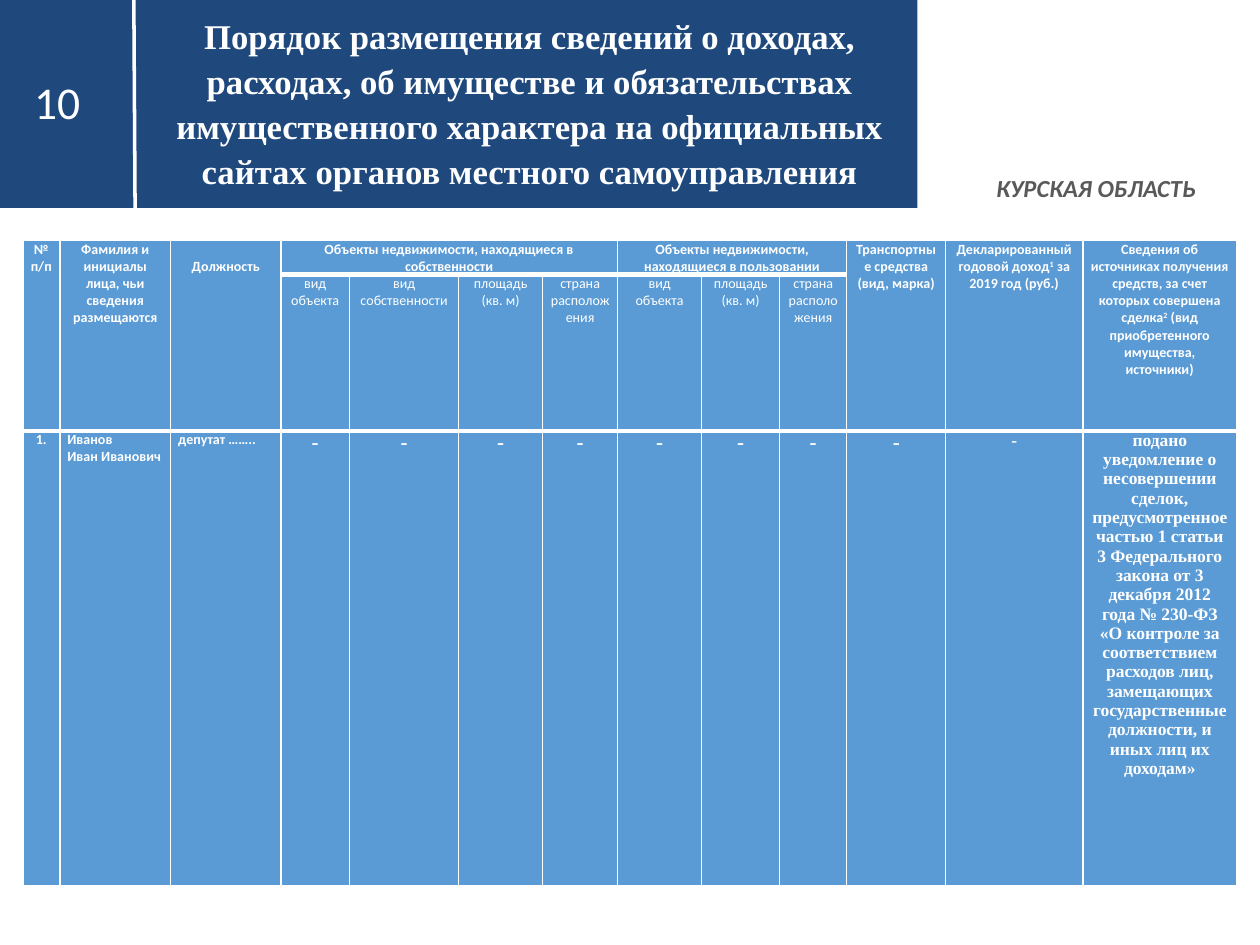
from dataclasses import dataclass

from lxml import etree
from pptx import Presentation
from pptx.dml.color import RGBColor
from pptx.enum import shapes, text
from pptx.oxml import ns
from pptx.util import Pt

NAVY, BLUE, WHITE, GRAY = "1F497D", "5B9BD5", "FFFFFF", "595959"
SANS, SERIF = "Calibri", "Times New Roman"
CENTER, JUSTIFY = text.PP_ALIGN.CENTER, text.PP_ALIGN.JUSTIFY
MIDDLE = text.MSO_ANCHOR.MIDDLE


@dataclass(frozen=True)
class Style:
    size: float
    font: str = SANS
    bold: bool = False
    italic: bool = False
    color: str = WHITE


@dataclass(frozen=True)
class Entry:
    """One table cell; parts at odd places in a paragraph are superscript."""
    row: int
    col: int
    paragraphs: tuple[tuple[str, ...], ...]
    style: Style
    rows: int = 1
    cols: int = 1
    align: text.PP_ALIGN = CENTER
    top: float = 0


def rgb(value: str) -> RGBColor:
    return RGBColor.from_string(value)


def write(frame, paragraphs, style: Style, align=CENTER, spacing=None) -> None:
    for index, parts in enumerate(paragraphs):
        paragraph = frame.paragraphs[0] if index == 0 else frame.add_paragraph()
        paragraph.alignment = align
        if spacing:
            paragraph.line_spacing = spacing
        for place, part in enumerate(parts):
            run = paragraph.add_run()
            run.text = part
            font = run.font
            font.size, font.name = Pt(style.size), style.font
            font.bold, font.italic = style.bold, style.italic
            font.color.rgb = rgb(style.color)
            if place % 2:
                run._r.get_or_add_rPr().set("baseline", "30000")


def add_label(slide, box, words: str, style: Style, wrap: bool = True) -> None:
    frame = slide.shapes.add_textbox(*map(Pt, box)).text_frame
    frame.word_wrap = wrap
    frame.vertical_anchor = MIDDLE
    write(frame, [(words,)], style)


def set_borders(cell, top: float, bottom: float) -> None:
    properties = cell._tc.get_or_add_tcPr()
    for side, width in (("L", 1), ("R", 1), ("T", top), ("B", bottom)):
        line = etree.SubElement(properties, ns.qn(f"a:ln{side}"), w=str(Pt(width)))
        fill = etree.SubElement(line, ns.qn("a:solidFill"))
        etree.SubElement(fill, ns.qn("a:srgbClr"), val=WHITE)


def fill_entry(table, entry: Entry) -> None:
    cell = table.cell(entry.row, entry.col)
    if entry.rows * entry.cols > 1:
        cell.merge(table.cell(entry.row + entry.rows - 1, entry.col + entry.cols - 1))
    cell.margin_top = Pt(entry.top)
    write(cell.text_frame, entry.paragraphs, entry.style, entry.align)


# Table content
HEAD, SUBHEAD = Style(8, bold=True), Style(8)
DASH, NOTICE = Style(12, SERIF, True), Style(10, SERIF, True)
COLUMNS = (21.2, 63.4, 62.9, 39.4, 62.3, 48, 42.9, 48, 44.6, 38.3, 56.6, 78.3, 88)
ROWS = (19.4, 89.3, 260)
BORDERS = ((1, 3), (1, 1), (3, 1))  # top and bottom of each row

TALL_HEADS = {
    0: ("№ п/п",),
    1: ("Фамилия и инициалы лица, чьи сведения размещаются",),
    2: ("Должность",),
    10: ("Транспортные средства (вид, марка)",),
    11: ("Декларированный годовой доход", "1", " за 2019 год (руб.)"),
    12: ("Сведения об источниках получения средств, за счет которых совершена сделка",
         "2", " (вид приобретенного имущества, источники)"),
}
USED = ("вид объекта", "площадь (кв. м)", "страна расположения")
OWNED = (USED[0], "вид собственности", *USED[1:])

entries = [Entry(0, col, (parts,), HEAD, rows=2, top=9.8 if col == 2 else 0)
           for col, parts in TALL_HEADS.items()]
entries += [
    Entry(0, 3, (("Объекты недвижимости, находящиеся в собственности",),), HEAD, cols=4),
    Entry(0, 7, (("Объекты недвижимости, находящиеся в пользовании",),), HEAD, cols=3),
]
entries += [Entry(1, col, ((words,),), SUBHEAD)
            for col, words in enumerate(OWNED + USED, start=3)]
entries += [
    Entry(2, 0, (("1.",),), HEAD),
    Entry(2, 1, (("Иванов",), ("Иван Иванович",)), HEAD, align=JUSTIFY),
    Entry(2, 2, (("депутат ……..",),), HEAD, align=JUSTIFY),
]
entries += [Entry(2, col, (("-",),), DASH) for col in range(3, 11)]
entries += [
    Entry(2, 11, (("-",),), NOTICE),
    Entry(2, 12, ((
        "подано уведомление о несовершении сделок, предусмотренное частью 1 "
        "статьи 3 Федерального закона от 3 декабря 2012 года № 230-ФЗ "
        "«О контроле за соответствием расходов лиц, замещающих государственные "
        "должности, и иных лиц их доходам»",),), NOTICE),
]

presentation = Presentation()
presentation.slide_width, presentation.slide_height = Pt(720), Pt(540)
slide = presentation.slides.add_slide(presentation.slide_layouts[5])

# Header band, placed behind the title
band = slide.shapes.add_shape(shapes.MSO_SHAPE.RECTANGLE, 0, 0, Pt(524.2), Pt(118.8))
band.shadow.inherit = False
band.fill.solid()
band.fill.fore_color.rgb = rgb(NAVY)
band.line.fill.background()
title = slide.shapes.title
title._element.addprevious(band._element)

# Divider between number and title
divider = slide.shapes.add_connector(
    shapes.MSO_CONNECTOR.STRAIGHT, Pt(76.5), 0, Pt(77.2), Pt(118.8))
divider.line.color.rgb = rgb(WHITE)
divider.line.width = Pt(2)
etree.SubElement(divider._element.spPr, ns.qn("a:effectLst"))

# Title
title.left, title.top, title.width, title.height = map(Pt, (88.6, 2.9, 427.7, 110.2))
title.text_frame.word_wrap = True
title.text_frame.auto_size = text.MSO_AUTO_SIZE.NONE
title.text_frame.vertical_anchor = MIDDLE
write(title.text_frame, [(
    "Порядок размещения сведений о доходах, расходах, об имуществе и "
    "обязательствах имущественного характера на официальных сайтах органов "
    "местного самоуправления",)], Style(19.8, SERIF, True), spacing=1.08)

# Region and page number
add_label(slide, (561.6, 95, 129.6, 24.5), "КУРСКАЯ ОБЛАСТЬ",
          Style(14, bold=True, italic=True, color=GRAY), wrap=False)
add_label(slide, (0.7, 2.9, 64.1, 110.2), "10", Style(26))

# Income table
table = slide.shapes.add_table(
    len(ROWS), len(COLUMNS), Pt(13), Pt(137.5), Pt(sum(COLUMNS)), Pt(sum(ROWS))).table
for column, width in zip(table.columns, COLUMNS):
    column.width = Pt(width)
for row, height, (top, bottom) in zip(table.rows, ROWS, BORDERS):
    row.height = Pt(height)
    for cell in row.cells:
        cell.margin_left = cell.margin_right = Pt(4.3)
        cell.margin_top = cell.margin_bottom = 0
        set_borders(cell, top, bottom)
        cell.fill.solid()
        cell.fill.fore_color.rgb = rgb(BLUE)
for entry in entries:
    fill_entry(table, entry)

presentation.save("out.pptx")
